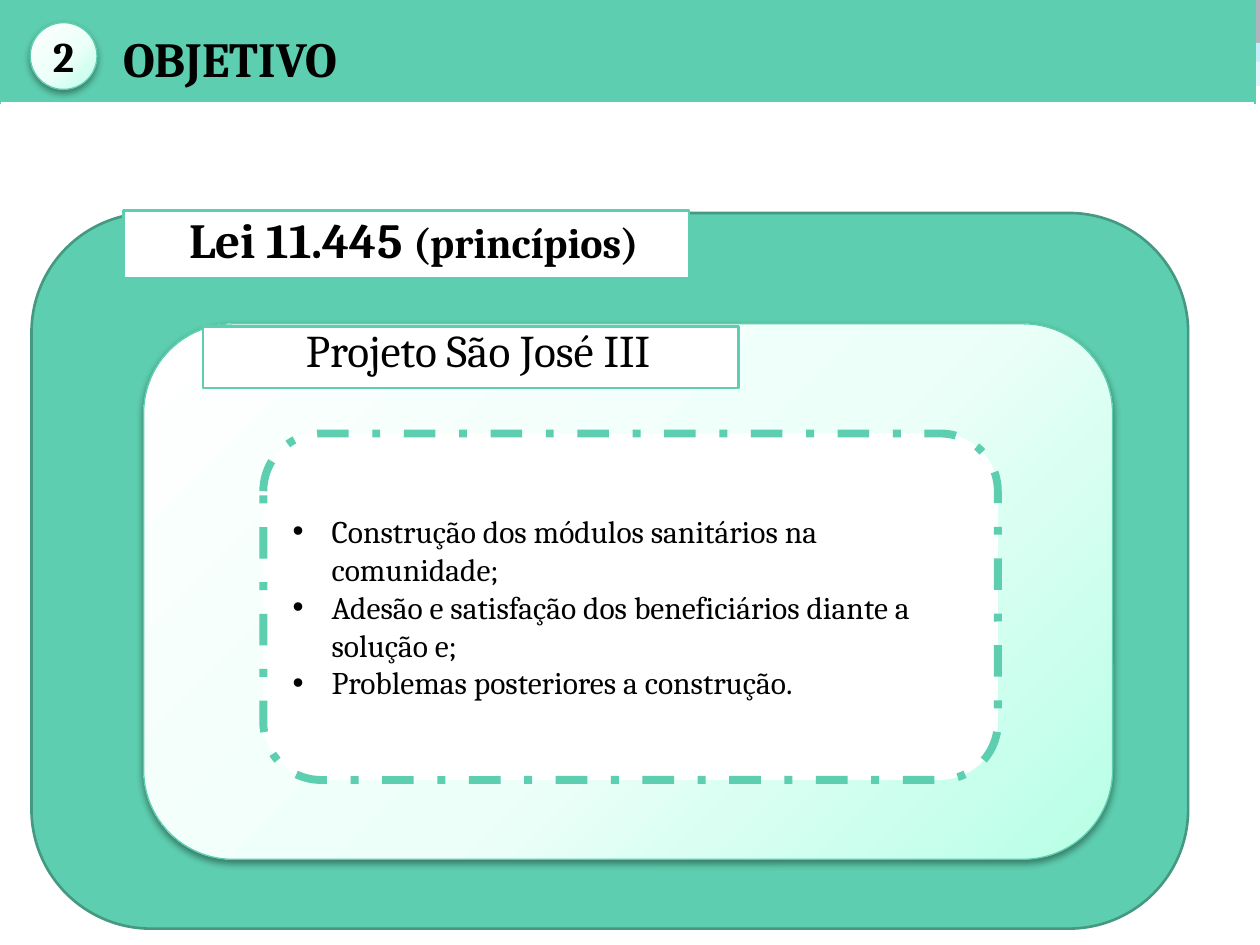
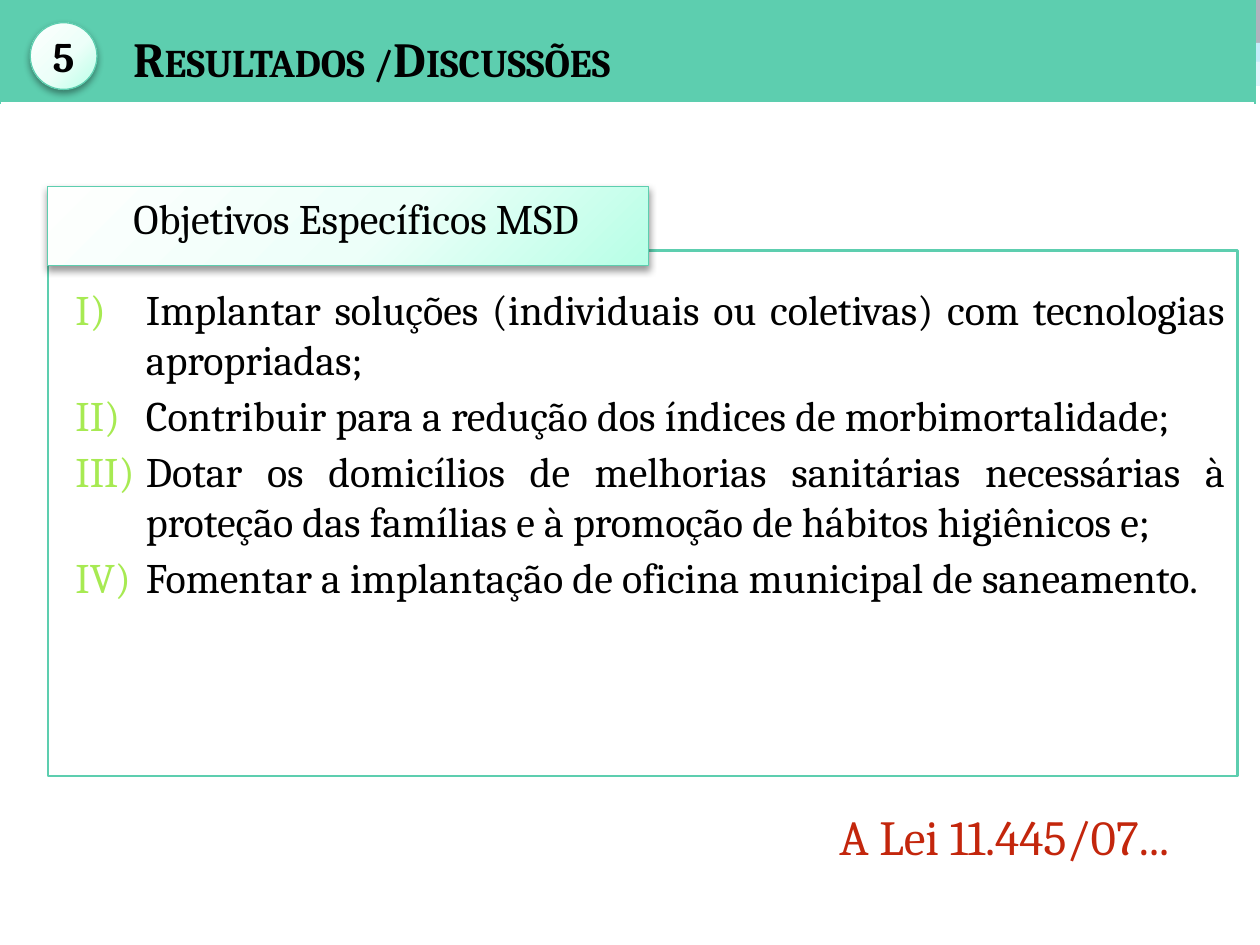
from pptx import Presentation
from pptx.dml.color import RGBColor
from pptx.enum.dml import MSO_LINE
from pptx.enum.shapes import MSO_SHAPE
from pptx.enum.text import MSO_ANCHOR, PP_ALIGN
from pptx.oxml import parse_xml
from pptx.util import Inches, Pt

FONT = "Cambria"
GREEN, EDGE, LIME = "5DCEAF", "459881", "A7EA52"
WHITE, BLACK, RED = "FFFFFF", "000000", "C3260C"
NAVY, SKY = "212745", "5ECCF3"
GLOW = [(0, "FEFFFE"), (55, "EDFFF9"), (100, "B7FFE6")]
STRIPES = [
    ((0, 0.4, 10, 0.09), SKY, 50),
    ((0, 0, 10, 0.34), NAVY, 100),
    ((0, 0.34, 10, 0.1), SKY, 100),
    ((5.92, 0.39, 4.08, 0.1), SKY, 100),
    ((5.92, 0.48, 4.08, 0.2), SKY, 50),
    ((9.94, 0, 0.06, 0.68), WHITE, 65),
]
RECT, ROUND, OVAL = MSO_SHAPE.RECTANGLE, MSO_SHAPE.ROUNDED_RECTANGLE, MSO_SHAPE.OVAL
NS = 'xmlns:a="http://schemas.openxmlformats.org/drawingml/2006/main"'

GOALS = [
    "Construção dos módulos sanitários na comunidade;",
    "Adesão e satisfação dos beneficiários diante a solução e;",
    "Problemas posteriores a construção.",
]
AIMS = [
    "Implantar soluções (individuais ou coletivas) com tecnologias apropriadas;",
    "Contribuir para a redução dos índices de morbimortalidade;",
    "Dotar os domicílios de melhorias sanitárias necessárias à proteção das famílias e à promoção de hábitos higiênicos e;",
    "Fomentar a implantação de oficina municipal de saneamento.",
]
DOT = '<a:buFont {ns} typeface="Arial"/>', '<a:buChar {ns} char="•"/>'
ROMAN = (
    '<a:buClr {ns}><a:srgbClr val="' + LIME + '"/></a:buClr>',
    '<a:buFont {ns} typeface="+mj-lt"/>',
    '<a:buAutoNum {ns} type="romanUcParenR"/>',
)


def rgb(code):
    return RGBColor.from_string(code)


def xml(text):
    return parse_xml(text.replace("{ns}", NS))


def glow(shape):
    stops = "".join(
        f'<a:gs pos="{pos * 1000}"><a:srgbClr val="{code}"/></a:gs>' for pos, code in GLOW
    )
    shape._element.spPr.insert(2, xml(
        f'<a:gradFill {{ns}} rotWithShape="1"><a:gsLst>{stops}</a:gsLst><a:path path="circle">'
        '<a:fillToRect l="-40000" t="-90000" r="140000" b="190000"/></a:path></a:gradFill>'
    ))
    shape._element.spPr.effectLst.append(xml(
        f'<a:outerShdw {{ns}} blurRad="{Pt(4.1)}" dist="{Pt(2)}" dir="5400000" rotWithShape="0">'
        '<a:srgbClr val="000000"><a:alpha val="40000"/></a:srgbClr></a:outerShdw>'
    ))


def box(slide, kind, place, fill=None, line=None, width=1.5, alpha=100):
    shape = slide.shapes.add_shape(kind, *map(Inches, place))
    shape.shadow.inherit = False
    if fill:
        shape.fill.solid()
        shape.fill.fore_color.rgb = rgb(fill)
        if alpha < 100:
            shade = shape._element.spPr.find(".//{*}srgbClr")
            shade.append(xml(f'<a:alpha {{ns}} val="{alpha * 1000}"/>'))
    else:
        glow(shape)
    if line:
        shape.line.color.rgb = rgb(line)
        shape.line.width = Pt(width)
    else:
        shape.line.fill.background()
    return shape


def write(shape, rows, align=PP_ALIGN.CENTER, anchor=MSO_ANCHOR.TOP, color=BLACK,
          bold=False, left=0.12, hang=0, before=3, space=None, marks=()):
    frame = shape.text_frame
    frame.word_wrap = True
    frame.vertical_anchor = anchor
    for i, row in enumerate(rows):
        para = frame.add_paragraph() if i else frame.paragraphs[0]
        para.alignment = align
        para.space_before = Pt(before)
        if space:
            para.line_spacing = space
        props = para._p.get_or_add_pPr()
        props.set("marL", str(Inches(left)))
        props.set("indent", str(Inches(-hang)))
        for mark in marks:
            props.append(xml(mark))
        for text, size in row:
            run = para.add_run()
            run.text = text
            run.font.name = FONT
            run.font.size = Pt(size)
            run.font.bold = bold
            run.font.color.rgb = rgb(color)
    return frame


def band(slide):
    frame = slide.shapes.add_table(1, 1, 0, Inches(-0.01), Inches(9.96), Inches(0.83))
    frame.table.first_row = False
    frame.table.horz_banding = False
    cell = frame.table.cell(0, 0)
    cell.fill.solid()
    cell.fill.fore_color.rgb = rgb(GREEN)
    props = cell._tc.get_or_add_tcPr()
    sides = [("L", GREEN, 0.75), ("R", GREEN, 0.75), ("T", GREEN, 0.75), ("B", WHITE, 1.5)]
    for i, (side, code, width) in enumerate(sides):
        props.insert(i, xml(
            f'<a:ln{side} {{ns}} w="{Pt(width)}"><a:solidFill><a:srgbClr val="{code}"/>'
            f'</a:solidFill></a:ln{side}>'
        ))


def header(slide, number, title, width, left):
    band(slide)
    badge = box(slide, OVAL, (0.24, 0.18, 0.53, 0.53), line=GREEN, width=0.75)
    write(badge, [[(number, 24)]], anchor=MSO_ANCHOR.MIDDLE, bold=True, left=0, before=0)
    label = slide.shapes.add_textbox(*map(Inches, (0.38, 0.18, width, 0.57)))
    frame = write(label, [[(title, 28)]], PP_ALIGN.LEFT, bold=True, left=left, before=0)
    frame.paragraphs[0].runs[0].font._element.set("cap", "small")


def start(deck):
    slide = deck.slides.add_slide(deck.slide_layouts[6])
    for place, code, alpha in STRIPES:
        box(slide, RECT, place, code, alpha=alpha)
    return slide


def goal(deck):
    slide = start(deck)
    box(slide, ROUND, (0.25, 1.69, 9.18, 5.68), GREEN, EDGE)
    law = box(slide, RECT, (0.98, 1.67, 4.49, 0.54), WHITE, GREEN)
    write(law, [[("Lei 11.445 ", 28), ("(princípios)", 24)]], bold=True, space=0.9)
    box(slide, ROUND, (1.14, 2.57, 7.69, 4.25), line=GREEN, width=0.75)
    plan = box(slide, RECT, (1.61, 2.59, 4.25, 0.49), WHITE, GREEN)
    write(plan, [[("Projeto São José III", 25.9)]], space=0.8)
    core = box(slide, ROUND, (2.09, 3.44, 5.83, 2.75), WHITE, GREEN, 4.5)
    core.line.dash_style = MSO_LINE.DASH_DOT
    write(core, [[(text, 18)] for text in GOALS], PP_ALIGN.LEFT, MSO_ANCHOR.MIDDLE,
          left=0.31, hang=0.31, before=0, marks=DOT)
    header(slide, "2", "OBJETIVO", 2.91, 0.5)


def result(deck):
    slide = start(deck)
    panel = box(slide, RECT, (0.38, 1.99, 9.44, 4.17), WHITE, GREEN)
    frame = write(panel, [[(text, 24)] for text in AIMS], PP_ALIGN.JUSTIFY,
                  left=0.68, hang=0.56, marks=ROMAN)
    frame.margin_top = Inches(0.26)
    tab = box(slide, RECT, (0.38, 1.48, 4.77, 0.63), line=GREEN, width=0.75)
    write(tab, [[("Objetivos Específicos MSD", 24)]])
    law = box(slide, RECT, (6.02, 6.35, 3.78, 0.63), WHITE)
    write(law, [[("A Lei 11.445/07...", 28)]], color=RED)
    header(slide, "5", "Resultados /Discussões", 5.74, 0.58)


def main():
    deck = Presentation()
    deck.slide_width, deck.slide_height = Inches(10), Inches(7.5)
    goal(deck)
    result(deck)
    deck.save("out.pptx")


if __name__ == "__main__":
    main()
